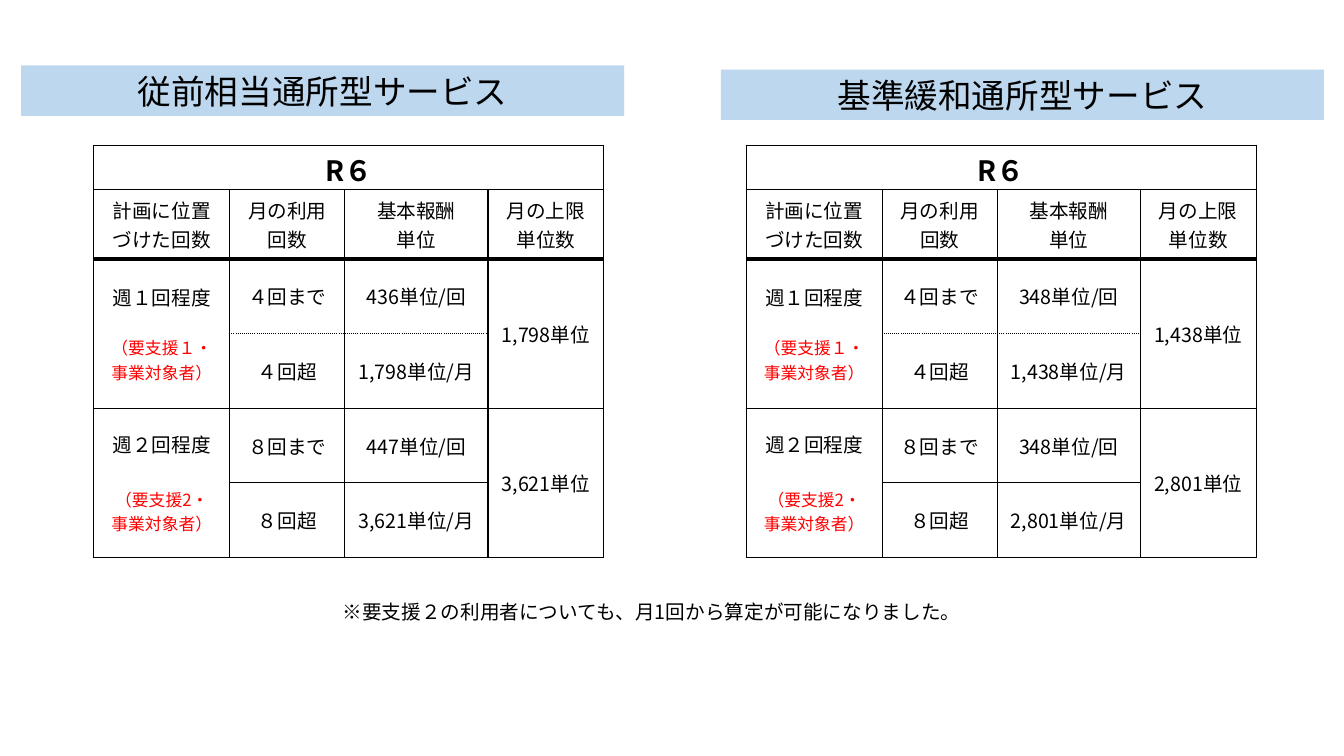
from dataclasses import dataclass

from lxml.etree import SubElement
from pptx import Presentation
from pptx.dml.color import RGBColor
from pptx.enum.shapes import MSO_SHAPE
from pptx.enum.text import MSO_ANCHOR, PP_ALIGN
from pptx.oxml.ns import qn
from pptx.util import Inches, Pt


@dataclass(frozen=True)
class Theme:
    face: str = "Noto Sans CJK JP"
    ink: str = "000000"
    red: str = "FF0000"
    band: str = "BDD7EE"
    head: int = 24
    year: int = 20
    body: int = 14
    small: int = 12
    thin: int = 1
    thick: int = 3


class Page:
    def __init__(self, slide, theme):
        self.slide = slide
        self.theme = theme

    def label(self, para, text, size, color=None, bold=False, align=PP_ALIGN.CENTER):
        para.text = text
        para.alignment = align
        font = para.font
        font.size = Pt(size)
        font.bold = bold
        font.name = self.theme.face
        font.color.rgb = RGBColor.from_string(color or self.theme.ink)
        props = para._p.pPr.find(qn("a:defRPr"))
        SubElement(props, qn("a:ea"), typeface=self.theme.face)

    def box(self, kind, left, top, width, height):
        shape = self.slide.shapes.add_shape(
            kind, Inches(left), Inches(top), Inches(width), Inches(height))
        shape.shadow.inherit = False
        shape.line.fill.background()
        frame = shape.text_frame
        frame.word_wrap = True
        frame.vertical_anchor = MSO_ANCHOR.MIDDLE
        frame.margin_top = frame.margin_bottom = 0
        return shape

    def head(self, text, left, top):
        shape = self.box(MSO_SHAPE.RECTANGLE, left, top, 5.98, 0.5)
        shape.fill.solid()
        shape.fill.fore_color.rgb = RGBColor.from_string(self.theme.band)
        self.label(shape.text_frame.paragraphs[0], text, self.theme.head)

    def note(self, text, left, top):
        shape = self.box(MSO_SHAPE.ROUNDED_RECTANGLE, left, top, 6.44, 0.6)
        shape.fill.background()
        frame = shape.text_frame
        frame.margin_bottom = Inches(0.32)
        self.label(frame.paragraphs[0], text, self.theme.body, align=PP_ALIGN.LEFT)

    def edge(self, cell, side, width, dash="solid"):
        line = SubElement(cell._tc.get_or_add_tcPr(), qn("a:ln" + side), w=str(Pt(width)))
        fill = SubElement(line, qn("a:solidFill"))
        SubElement(fill, qn("a:srgbClr"), val=self.theme.ink)
        SubElement(line, qn("a:prstDash"), val=dash)

    def frame(self, cell, row, col):
        thin, thick = self.theme.thin, self.theme.thick
        inner = col in (1, 2)
        self.edge(cell, "L", thin)
        self.edge(cell, "R", thin)
        self.edge(cell, "T", thick if row == 2 else thin,
                  "sysDot" if inner and row == 3 else "solid")
        self.edge(cell, "B", thick if row == 1 else thin,
                  "sysDot" if inner and row == 2 else "solid")
        cell.fill.background()

    def fill(self, cell, lines):
        cell.vertical_anchor = MSO_ANCHOR.MIDDLE
        for i, text in enumerate(lines):
            frame = cell.text_frame
            para = frame.add_paragraph() if i else frame.paragraphs[0]
            self.label(para, text, self.theme.body)

    def target(self, cell, times, group, gap):
        self.fill(cell, [times])
        for i, text in enumerate(group):
            para = cell.text_frame.add_paragraph()
            self.label(para, text, self.theme.small, self.theme.red)
            if i == 0:
                para.space_before = Pt(gap)

    def table(self, left, top, rates):
        widths = (1.35, 1.14, 1.42, 1.15)
        heights = (0.44, 0.69) + (0.74,) * 4
        table = self.slide.shapes.add_table(
            len(heights), len(widths), Inches(left), Inches(top),
            Inches(sum(widths)), Inches(sum(heights))).table
        table.first_row = table.horz_banding = False
        for column, width in zip(table.columns, widths):
            column.width = Inches(width)
        for row, height in zip(table.rows, heights):
            row.height = Inches(height)
        for row in range(len(heights)):
            for col in range(len(widths)):
                self.frame(table.cell(row, col), row, col)

        # Year and column heads
        year = table.cell(0, 0)
        year.merge(table.cell(0, 3))
        year.vertical_anchor = MSO_ANCHOR.MIDDLE
        year.margin_top, year.margin_bottom = Inches(0.03), 0
        self.label(year.text_frame.paragraphs[0], "R６", self.theme.year, bold=True)
        for col, lines in enumerate(HEADS):
            self.fill(table.cell(1, col), lines)

        # Two rows for each weekly plan
        for i, (plan, (rate, limit)) in enumerate(zip(PLANS, rates)):
            times, group, gap, count = plan
            row = 2 + 2 * i
            for col in (0, 3):
                table.cell(row, col).merge(table.cell(row + 1, col))
            self.target(table.cell(row, 0), times, group, gap)
            self.fill(table.cell(row, 1), [f"{count}回まで"])
            self.fill(table.cell(row + 1, 1), [f"{count}回超"])
            self.fill(table.cell(row, 2), [f"{rate}単位/回"])
            self.fill(table.cell(row + 1, 2), [f"{limit}単位/月"])
            self.fill(table.cell(row, 3), [f"{limit}単位"])


HEADS = (["計画に位置づけた回数"], ["月の利用回数"], ["基本報酬", "単位"], ["月の上限単位数"])
PLANS = (
    ("週１回程度", ["（要支援１・事業対象者）"], 17, "４"),
    ("週２回程度", ["（要支援2・", "事業対象者）"], 20, "８"),
)


def main():
    deck = Presentation()
    deck.slide_width, deck.slide_height = Inches(13.33), Inches(7.5)
    page = Page(deck.slides.add_slide(deck.slide_layouts[6]), Theme())

    # Service names
    page.head("従前相当通所型サービス", 0.21, 0.65)
    page.head("基準緩和通所型サービス", 7.15, 0.69)

    # Remark
    page.note("※要支援２の利用者についても、月1回から算定が可能になりました。", 3.27, 5.93)

    # Rates for each service
    page.table(0.93, 1.44, (("436", "1,798"), ("447", "3,621")))
    page.table(7.4, 1.44, (("348", "1,438"), ("348", "2,801")))

    deck.save("out.pptx")


if __name__ == "__main__":
    main()
